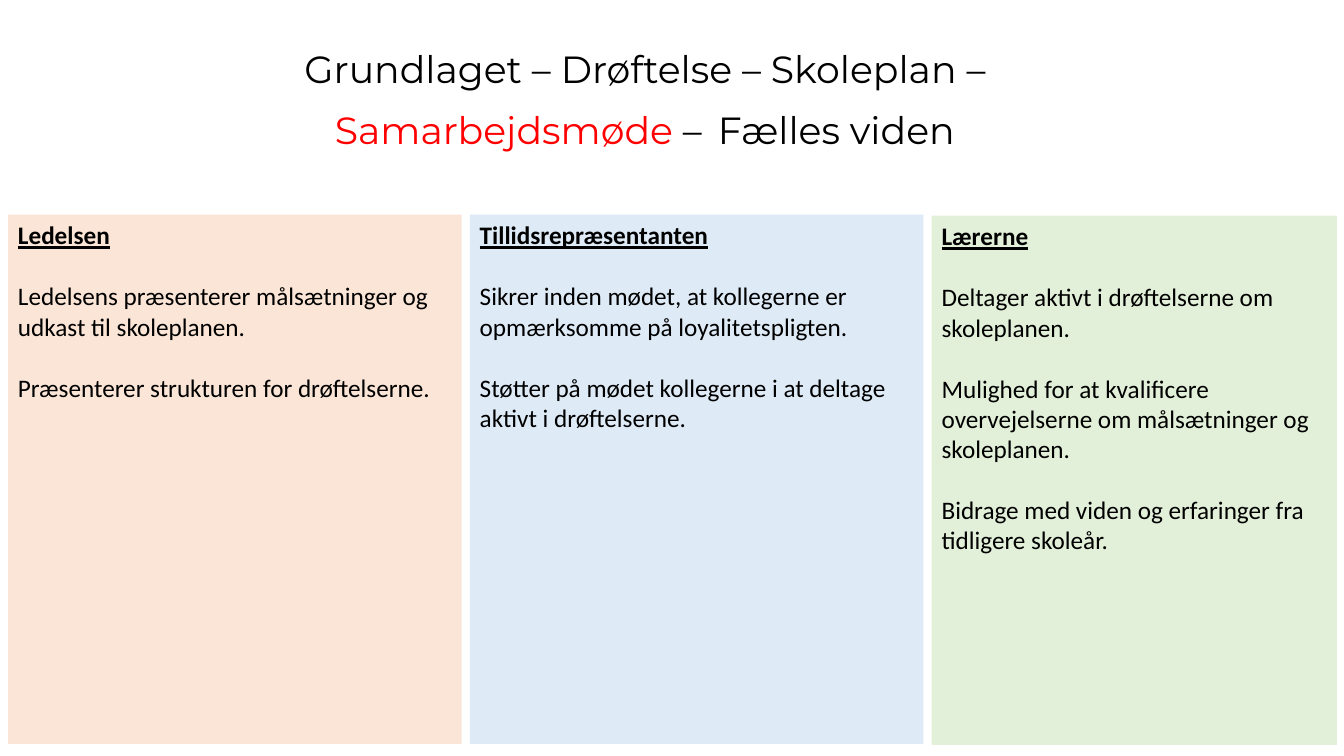
from dataclasses import dataclass

from pptx import Presentation
from pptx.dml.color import RGBColor
from pptx.enum import shapes, text
from pptx.util import Inches, Pt


@dataclass(frozen=True)
class Theme:
    ink: str = "000000"
    accent: str = "FF0000"
    management: str = "FBE5D6"
    representative: str = "DEEBF7"
    teachers: str = "E2F0D9"
    title_font: str = "Montserrat"
    body_font: str = "Calibri"
    title_size: int = 27
    gap_size: int = 44
    body_size: int = 18
    paragraph_gap: int = 22


THEME = Theme()

TITLE = [
    ("Grundlaget – Drøftelse – Skoleplan – ", {}),
    ("Samarbejdsmøde", {"color": THEME.accent}),
    (" –", {}),
    (" ", {"size": THEME.gap_size}),
    ("Fælles viden", {}),
]

COLUMNS = [
    ("Ledelsen", THEME.management, 4.5, 2.13, [
        "Ledelsens præsenterer målsætninger og udkast til skoleplanen.",
        "Præsenterer strukturen for drøftelserne.",
    ]),
    ("Tillidsrepræsentanten", THEME.representative, 4.5, 2.13, [
        "Sikrer inden mødet, at kollegerne er opmærksomme på loyalitetspligten.",
        "Støtter på mødet kollegerne i at deltage aktivt i drøftelserne.",
    ]),
    ("Lærerne", THEME.teachers, 4.02, 2.14, [
        "Deltager aktivt i drøftelserne om skoleplanen.",
        "Mulighed for at kvalificere overvejelserne om målsætninger og skoleplanen.",
        "Bidrage med viden og erfaringer fra tidligere skoleår.",
    ]),
]

MARGIN = 0.08
COLUMN_GAP = 0.08
COLUMN_HEIGHT = 5.25


def add_run(p, content, font=THEME.body_font, size=THEME.body_size,
            color=THEME.ink, bold=False, underline=False):
    r = p.add_run()
    r.text = content
    r.font.name = font
    r.font.size = Pt(size)
    r.font.color.rgb = RGBColor.from_string(color)
    r.font.bold = bold
    r.font.underline = underline


def add_title(s):
    title = s.shapes.title
    title.left, title.top = Inches(1.62), Inches(0.26)
    title.width, title.height = Inches(9.55), Inches(1.36)
    tf = title.text_frame
    tf.word_wrap = True
    tf.auto_size = text.MSO_AUTO_SIZE.NONE
    tf.vertical_anchor = text.MSO_ANCHOR.BOTTOM
    p = tf.paragraphs[0]
    p.alignment = text.PP_ALIGN.CENTER
    p.line_spacing = 0.9
    for content, style in TITLE:
        add_run(p, content, **{"font": THEME.title_font, "size": THEME.title_size, **style})


def add_column(s, left, top, width, fill, heading, points):
    sp = s.shapes.add_shape(shapes.MSO_SHAPE.RECTANGLE, Inches(left), Inches(top),
                            Inches(width), Inches(COLUMN_HEIGHT))
    sp.shadow.inherit = False
    sp.fill.solid()
    sp.fill.fore_color.rgb = RGBColor.from_string(fill)
    sp.line.fill.background()
    tf = sp.text_frame
    tf.word_wrap = True
    tf.vertical_anchor = text.MSO_ANCHOR.TOP
    p = tf.paragraphs[0]
    p.alignment = text.PP_ALIGN.LEFT
    add_run(p, heading, bold=True, underline=True)
    for point in points:
        p = tf.add_paragraph()
        p.alignment = text.PP_ALIGN.LEFT
        p.space_before = Pt(THEME.paragraph_gap)
        add_run(p, point)


def main():
    prs = Presentation()
    prs.slide_width, prs.slide_height = Inches(13.33), Inches(7.5)
    s = prs.slides.add_slide(prs.slide_layouts[5])
    add_title(s)
    left = MARGIN
    for heading, fill, width, top, points in COLUMNS:
        add_column(s, left, top, width, fill, heading, points)
        left += width + COLUMN_GAP
    prs.save("out.pptx")


if __name__ == "__main__":
    main()
